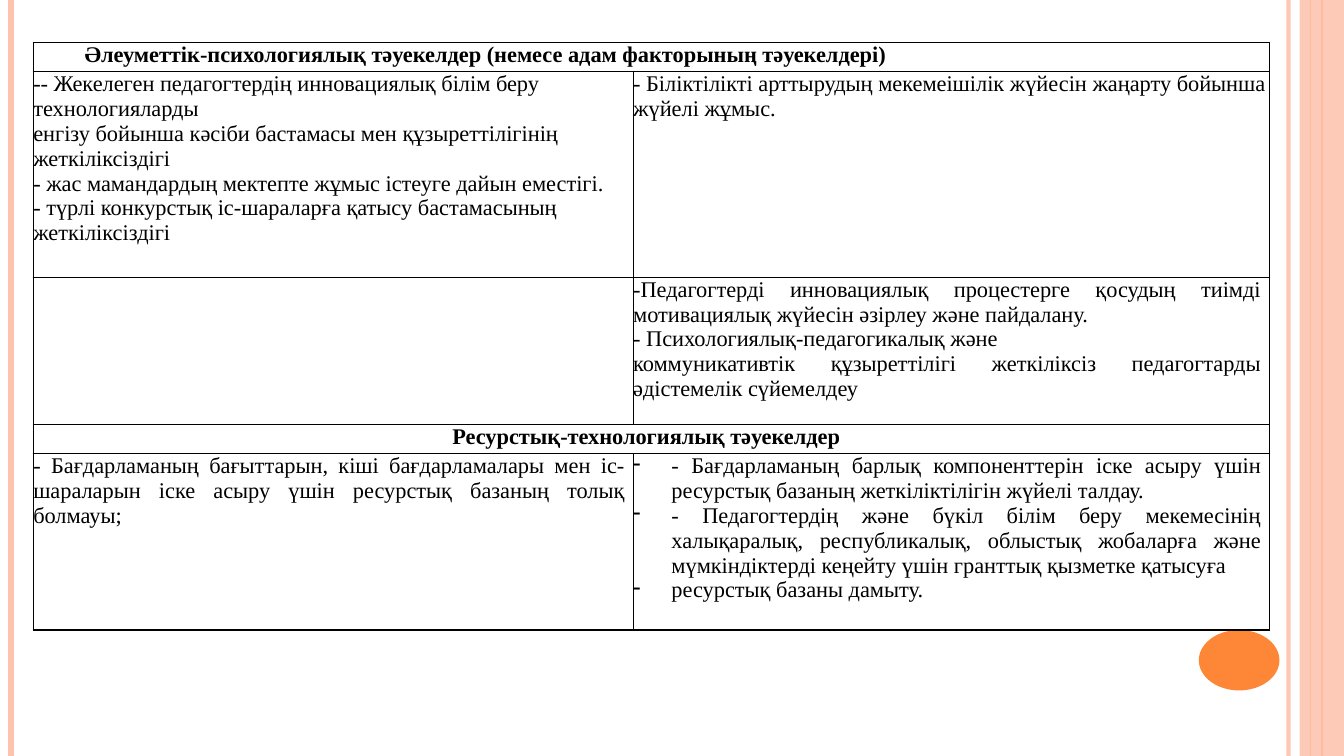
from dataclasses import dataclass

from lxml.etree import SubElement
from pptx import Presentation
from pptx.dml.color import RGBColor
from pptx.enum.shapes import MSO_CONNECTOR, MSO_SHAPE
from pptx.enum.text import PP_ALIGN
from pptx.oxml import parse_xml
from pptx.oxml.ns import nsdecls, qn
from pptx.util import Inches, Pt


@dataclass(frozen=True)
class Theme:
    ink: str = "000000"
    peach: str = "FEC3AE"
    orange: str = "FE8637"
    font: str = "Times New Roman"
    size: int = 16
    border: float = 1


THEME = Theme()
WIDTH, HEIGHT = 13.33, 7.5

# Offset from the left edge, colour, weight, opacity
STRIPES = [
    (12.78, THEME.peach, 3, 93),
    (0.11, THEME.peach, 4.5, 100),
    (13.11, THEME.orange, 1.5, 100),
    (13, THEME.orange, 0.75, 100),
]
BAND = (12.89, 0, 0.44, HEIGHT)
DOT = (11.89, 6.25, 0.8, 0.6)

COLS = [5.95, 6.31]
ROWS = [0.29, 2.04, 1.46, 0.29, 1.75]
# Row: (heading, style) across both columns
HEADS = {
    0: ("Әлеуметтік-психологиялық тәуекелдер (немесе адам факторының тәуекелдері)", "hang"),
    3: ("Ресурстық-технологиялық тәуекелдер", "center"),
}
# (row, column): (style, paragraphs)
BODY = {
    (1, 0): ("left", [
        "-- Жекелеген педагогтердің инновациялық білім беру технологияларды",
        "енгізу бойынша кәсіби бастамасы мен құзыреттілігінің жеткіліксіздігі",
        "- жас мамандардың мектепте жұмыс істеуге дайын еместігі.",
        "- түрлі конкурстық іс-шараларға қатысу бастамасының жеткіліксіздігі",
    ]),
    (1, 1): ("left", [
        "- Біліктілікті арттырудың мекемеішілік жүйесін жаңарту бойынша жүйелі жұмыс.",
    ]),
    (2, 1): ("justify", [
        "-Педагогтерді инновациялық процестерге қосудың тиімді мотивациялық "
        "жүйесін әзірлеу және пайдалану.",
        "- Психологиялық-педагогикалық және",
        "коммуникативтік құзыреттілігі жеткіліксіз педагогтарды әдістемелік сүйемелдеу",
    ]),
    (4, 0): ("justify", [
        "- Бағдарламаның бағыттарын, кіші бағдарламалары мен іс-шараларын іске "
        "асыру үшін ресурстық базаның толық болмауы;",
    ]),
    (4, 1): ("bullet", [
        "- Бағдарламаның барлық компоненттерін іске асыру үшін ресурстық базаның "
        "жеткіліктілігін жүйелі талдау.",
        "- Педагогтердің және бүкіл білім беру мекемесінің халықаралық, "
        "республикалық, облыстық жобаларға және мүмкіндіктерді кеңейту үшін "
        "гранттық қызметке қатысуға",
        "ресурстық базаны дамыту.",
    ]),
}
# Alignment, left margin, first-line indent, right inset
STYLES = {
    "left": (PP_ALIGN.LEFT, 0, 0, 0),
    "hang": (PP_ALIGN.LEFT, 0.61, -0.1, 0),
    "center": (PP_ALIGN.CENTER, 0, 0, 0.1),
    "justify": (PP_ALIGN.JUSTIFY, 0, 0, 0.08),
    "bullet": (PP_ALIGN.JUSTIFY, 0.38, -0.38, 0.08),
}


def rgb(code):
    return RGBColor.from_string(code)


def fade(fill, percent):
    """Set the opacity of a solid fill held in the given element."""
    color = fill.find(".//" + qn("a:srgbClr"))
    SubElement(color, qn("a:alpha"), val=str(percent * 1000))


def add_stripe(slide, left, color, weight, opacity):
    x = Inches(left)
    line = slide.shapes.add_connector(MSO_CONNECTOR.STRAIGHT, x, 0, x, Inches(HEIGHT))
    line.line.color.rgb = rgb(color)
    line.line.width = Pt(weight)
    props = line._element.spPr
    if opacity < 100:
        fade(props, opacity)
    SubElement(props, qn("a:effectLst"))


def add_block(slide, kind, box, color):
    block = slide.shapes.add_shape(kind, *map(Inches, box))
    block.shadow.inherit = False
    block.fill.solid()
    block.fill.fore_color.rgb = rgb(color)
    block.line.fill.background()
    return block


def add_decor(slide):
    for stripe in STRIPES:
        add_stripe(slide, *stripe)
    band = add_block(slide, MSO_SHAPE.RECTANGLE, BAND, THEME.peach)
    fade(band._element.spPr, 87)
    add_block(slide, MSO_SHAPE.OVAL, DOT, THEME.orange)


def frame_cell(cell):
    """Clear the fill and insets and draw all four borders."""
    cell.fill.background()
    cell.margin_left = cell.margin_right = cell.margin_top = cell.margin_bottom = 0
    props = cell._tc.get_or_add_tcPr()
    for spot, side in enumerate("LRTB"):
        props.insert(spot, parse_xml(
            f'<a:ln{side} {nsdecls("a")} w="{Pt(THEME.border)}"><a:solidFill>'
            f'<a:srgbClr val="{THEME.ink}"/></a:solidFill></a:ln{side}>'))


def write_cell(cell, style, lines, bold=False):
    align, margin, indent, inset = STYLES[style]
    cell.margin_right = Inches(inset)
    cell.text = "\n".join(lines)
    for para in cell.text_frame.paragraphs:
        para.alignment = align
        para.font.name = THEME.font
        para.font.size = Pt(THEME.size)
        para.font.bold = bold
        para.font.color.rgb = rgb(THEME.ink)
        props = para._p.get_or_add_pPr()
        props.set("marL", str(Inches(margin)))
        props.set("indent", str(Inches(indent)))
        if style == "bullet":
            props.insert(0, parse_xml(f'<a:buChar {nsdecls("a")} char="-"/>'))


def add_risks(slide, left, top):
    box = map(Inches, (left, top, sum(COLS), sum(ROWS)))
    table = slide.shapes.add_table(len(ROWS), len(COLS), *box).table
    table.first_row = table.horz_banding = False
    for col, width in zip(table.columns, COLS):
        col.width = Inches(width)
    for row, height in zip(table.rows, ROWS):
        row.height = Inches(height)
    for cell in table.iter_cells():
        frame_cell(cell)
    for row, (text, style) in HEADS.items():
        table.cell(row, 0).merge(table.cell(row, 1))
        write_cell(table.cell(row, 0), style, [text], bold=True)
    for (row, col), (style, lines) in BODY.items():
        write_cell(table.cell(row, col), style, lines)


def main():
    deck = Presentation()
    deck.slide_width, deck.slide_height = Inches(WIDTH), Inches(HEIGHT)
    slide = deck.slides.add_slide(deck.slide_layouts[6])
    add_decor(slide)
    add_risks(slide, 0.33, 0.42)
    deck.save("out.pptx")


if __name__ == "__main__":
    main()
